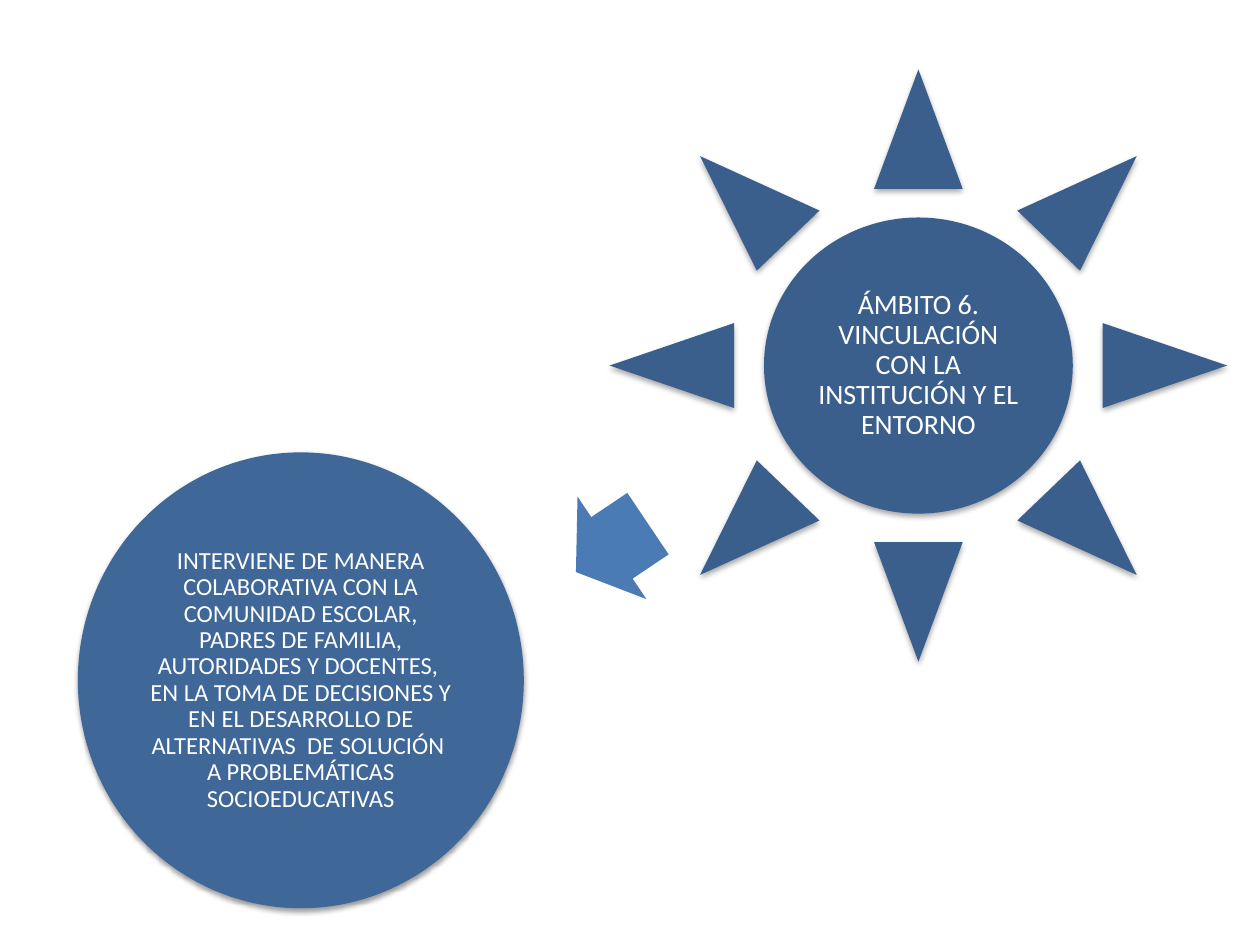
"""Build a slide linking a sun-shaped topic to its descriptive circle."""
from lxml import etree
from pptx import Presentation
from pptx import util as u
from pptx.dml.color import RGBColor
from pptx.enum import shapes, text
from pptx.oxml import ns

CIRCLE_BLUE = RGBColor(0x3F, 0x67, 0x97)
ARROW_BLUE = RGBColor(0x4B, 0x7B, 0xB5)
SUN_BLUE = RGBColor(0x3A, 0x5F, 0x8C)
WHITE = RGBColor(0xFF, 0xFF, 0xFF)

FIGURES = [
    {
        "kind": shapes.MSO_SHAPE.OVAL,
        "box": (1.57, 9.12, 8.99, 9.19),
        "fill": CIRCLE_BLUE,
        "shadow": {"opacity": 38, "blur": 3.1, "distance": 1.6},
        "size": 14,
        "text": "INTERVIENE DE MANERA COLABORATIVA CON LA COMUNIDAD ESCOLAR, "
                "PADRES DE FAMILIA, AUTORIDADES Y DOCENTES,  EN LA TOMA DE "
                "DECISIONES Y EN EL DESARROLLO DE ALTERNATIVAS  DE SOLUCIÓN  "
                "A PROBLEMÁTICAS SOCIOEDUCATIVAS",
    },
    {
        "kind": shapes.MSO_SHAPE.RIGHT_ARROW,
        "box": (11.46, 9.8, 1.75, 2.49),
        "fill": ARROW_BLUE,
        "rotation": 146.1,
        "adjustments": (0.6, 0.5),
    },
    {
        "kind": shapes.MSO_SHAPE.SUN,
        "box": (12.29, 1.4, 12.45, 11.94),
        "fill": SUN_BLUE,
        "shadow": {"opacity": 35, "blur": 3.1, "distance": 1.8},
        "size": 16,
        "text": "ÁMBITO 6. VINCULACIÓN CON LA INSTITUCIÓN Y EL ENTORNO",
    },
]

FRAME_FORMAT = {
    "word_wrap": True,
    "vertical_anchor": text.MSO_ANCHOR.MIDDLE,
    **{f"margin_{side}": u.Cm(0.05) for side in ("left", "top", "right", "bottom")},
}
PARAGRAPH_FORMAT = {"alignment": text.PP_ALIGN.CENTER, "line_spacing": 0.9}


def apply_format(target, values):
    for name, value in values.items():
        setattr(target, name, value)


def add_shadow(shape, opacity, blur, distance):
    effects = shape._element.spPr.find(ns.qn("a:effectLst"))
    outer = etree.SubElement(
        effects, ns.qn("a:outerShdw"), blurRad=str(u.Pt(blur)),
        dist=str(u.Pt(distance)), dir="5400000", rotWithShape="0")
    color = etree.SubElement(outer, ns.qn("a:srgbClr"), val="000000")
    etree.SubElement(color, ns.qn("a:alpha"), val=str(opacity * 1000))


def write_text(shape, words, size):
    apply_format(shape.text_frame, FRAME_FORMAT)
    paragraph = shape.text_frame.paragraphs[0]
    paragraph.text = words
    apply_format(paragraph, PARAGRAPH_FORMAT)
    font = paragraph.runs[0].font
    apply_format(font, {"name": "Calibri", "size": u.Pt(size)})
    font.color.rgb = WHITE


def add_figure(slide, figure):
    shape = slide.shapes.add_shape(figure["kind"], *map(u.Cm, figure["box"]))
    shape.shadow.inherit = False
    shape.fill.solid()
    shape.fill.fore_color.rgb = figure["fill"]
    shape.line.fill.background()
    shape.rotation = figure.get("rotation", 0)
    for index, value in enumerate(figure.get("adjustments", ())):
        shape.adjustments[index] = value
    if "shadow" in figure:
        add_shadow(shape, **figure["shadow"])
    if "text" in figure:
        write_text(shape, figure["text"], figure["size"])


def main():
    presentation = Presentation()
    presentation.slide_width, presentation.slide_height = u.Cm(25.4), u.Cm(19.05)
    slide = presentation.slides.add_slide(presentation.slide_layouts[6])
    for figure in FIGURES:
        add_figure(slide, figure)
    presentation.save("out.pptx")


if __name__ == "__main__":
    main()
